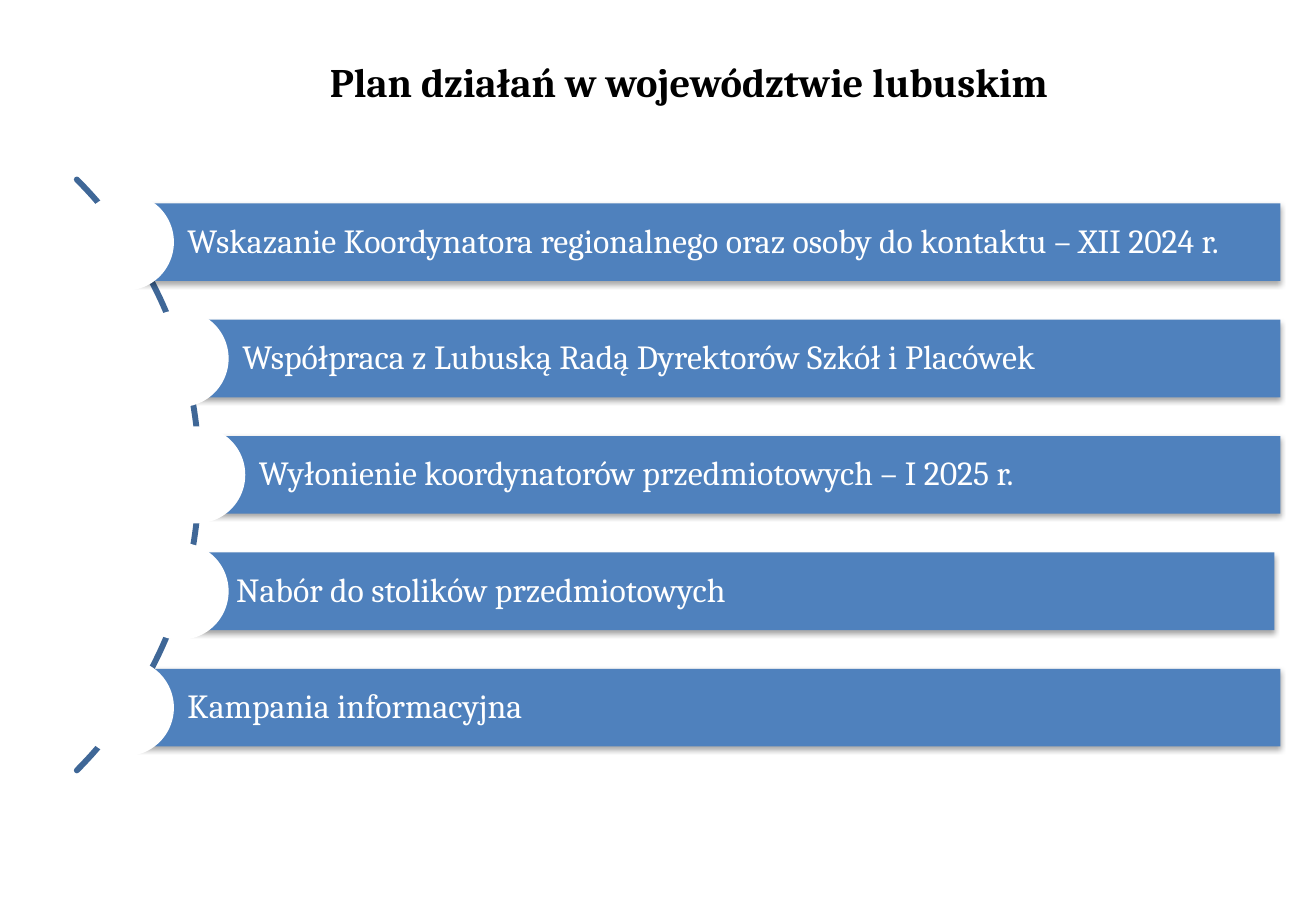
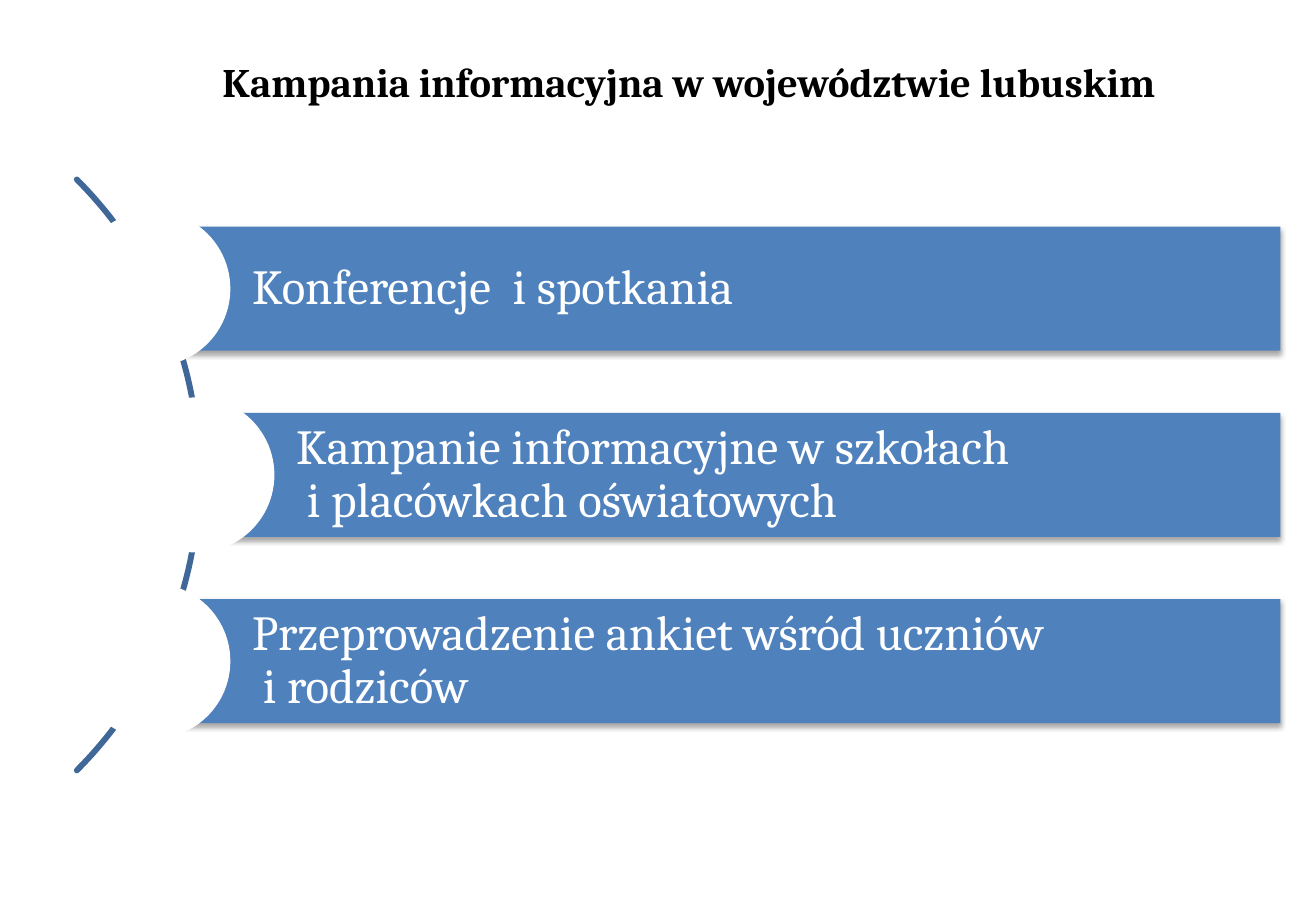
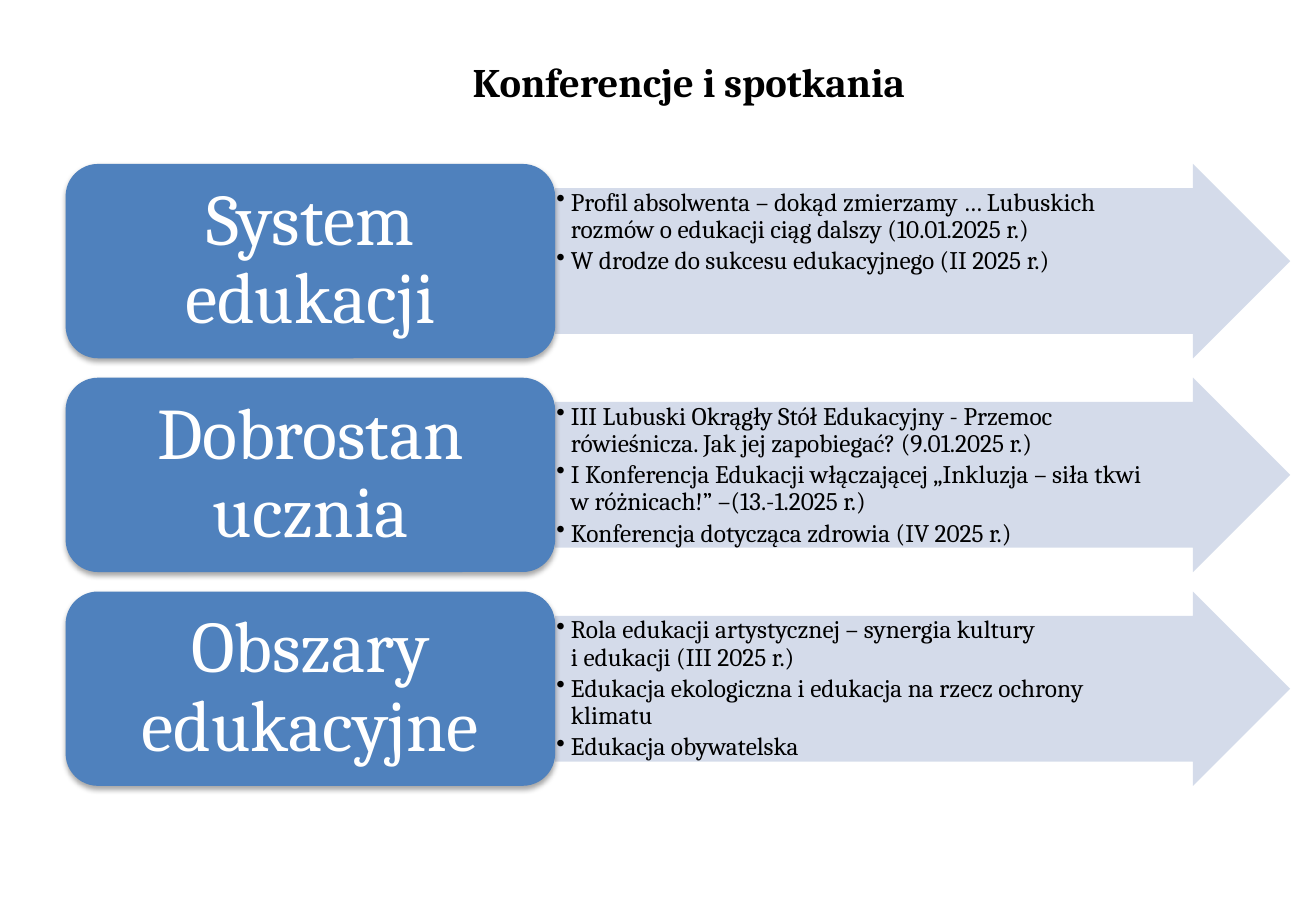
from math import cos, radians, sin, sqrt

from pptx import Presentation
from pptx.dml.color import RGBColor
from pptx.enum.shapes import MSO_SHAPE as Preset
from pptx.enum.text import MSO_ANCHOR as Anchor, PP_ALIGN as Align
from pptx.oxml import parse_xml
from pptx.oxml.ns import nsdecls, qn
from pptx.util import Inches, Pt

# All lengths below are counted in square grid cells.
CELL = Inches(0.25)
COLUMNS, ROWS = 43.33, 30

BLUE = RGBColor(0x4F, 0x81, 0xBD)
DARK_BLUE = RGBColor(0x3F, 0x67, 0x97)
PALE_BLUE = RGBColor(0xD0, 0xD8, 0xE8)
WHITE = RGBColor(0xFF, 0xFF, 0xFF)
BLACK = RGBColor(0, 0, 0)
FONT = "Cambria"

ARC_X, ARC_Y, ARC_RADIUS = -7.2, 15.64, 13.76
DOT_RADIUS = 13.68
LIST_HEIGHT, LIST_RIGHT = 20.44, 42.16
CARD_LEFT, CARD_TOP, CARD_WIDTH, CARD_HEIGHT, CARD_GAP = 2.16, 5.4, 16.12, 6.4, 0.64
ARROW_WIDTH = 24.2

PLAN = [
    "Wskazanie Koordynatora regionalnego oraz osoby do kontaktu – XII 2024 r.",
    "Współpraca z Lubuską Radą Dyrektorów Szkół i Placówek",
    "Wyłonienie koordynatorów przedmiotowych – I 2025 r.",
    "Nabór do stolików przedmiotowych",
    "Kampania informacyjna",
]
CAMPAIGN = [
    "Konferencje  i spotkania",
    "Kampanie informacyjne w szkołach\v i placówkach oświatowych",
    "Przeprowadzenie ankiet wśród uczniów\v i rodziców",
]
MEETINGS = {
    "System edukacji": [
        "Profil absolwenta – dokąd zmierzamy … Lubuskich rozmów o edukacji ciąg dalszy (10.01.2025 r.)",
        "W drodze do sukcesu edukacyjnego (II 2025 r.)",
    ],
    "Dobrostan ucznia": [
        "III Lubuski Okrągły Stół Edukacyjny - Przemoc rówieśnicza. Jak jej zapobiegać? (9.01.2025 r.)",
        "I Konferencja Edukacji włączającej „Inkluzja – siła tkwi\vw różnicach!” –(13.-1.2025 r.)",
        "Konferencja dotycząca zdrowia (IV 2025 r.)",
    ],
    "Obszary edukacyjne": [
        "Rola edukacji artystycznej – synergia kultury\vi edukacji (III 2025 r.)",
        "Edukacja ekologiczna i edukacja na rzecz ochrony klimatu",
        "Edukacja obywatelska",
    ],
}


def cells(*counts):
    return [round(count * CELL) for count in counts]


class Deck:
    def __init__(self):
        self.presentation = Presentation()
        self.presentation.slide_width, self.presentation.slide_height = cells(COLUMNS, ROWS)
        self.slide = None

    def new_slide(self, title):
        self.slide = self.presentation.slides.add_slide(self.presentation.slide_layouts[6])
        heading = self.slide.shapes.add_textbox(*cells(6.28, 0.64, 32.8, 4.08))
        self.fill_text(heading, [title], 24, BLACK, align=Align.CENTER, bold=True, spacing=1.0)

    def fill_text(self, holder, lines, size, color, align=Align.LEFT, anchor=Anchor.MIDDLE,
                  margins=(0.4, 0.2, 0.4, 0.2), bold=False, bullets=False, spacing=0.9):
        """Fill a shape with paragraphs; margins run left, top, right, bottom."""
        frame = holder.text_frame
        frame.word_wrap = True
        frame.vertical_anchor = anchor
        (frame.margin_left, frame.margin_top,
         frame.margin_right, frame.margin_bottom) = cells(*margins)
        for index, line in enumerate(lines):
            paragraph = frame.add_paragraph() if index else frame.paragraphs[0]
            paragraph.text = line
            if bullets:
                properties = paragraph._p.get_or_add_pPr()
                properties.set("marL", str(Inches(0.12)))
                properties.set("indent", str(-Inches(0.12)))
                properties.append(parse_xml(f'<a:buChar {nsdecls("a")} char="•"/>'))
                paragraph.space_after = Pt(2.25)
            paragraph.alignment = align
            paragraph.line_spacing = spacing
            font = paragraph.font
            font.name, font.size, font.bold = FONT, Pt(size), bold
            font.color.rgb = color

    def shape(self, preset, left, top, width, height, fill, shadow=False):
        shape = self.slide.shapes.add_shape(preset, *cells(left, top, width, height))
        shape.fill.solid()
        shape.fill.fore_color.rgb = fill
        shape.line.fill.background()
        shape.shadow.inherit = False
        if shadow:
            shape._element.spPr.find(qn("a:effectLst")).append(parse_xml(
                f'<a:outerShdw {nsdecls("a")} blurRad="40000" dist="23000" dir="5400000" '
                'rotWithShape="0"><a:srgbClr val="000000"><a:alpha val="35000"/>'
                '</a:srgbClr></a:outerShdw>'))
        return shape

    def arc(self):
        """Draw the quarter circle that the list items hang on."""
        points = [cells(ARC_X + ARC_RADIUS * cos(radians(angle)),
                        ARC_Y + ARC_RADIUS * sin(radians(angle)))
                  for angle in range(-45, 46)]
        builder = self.slide.shapes.build_freeform(*points[0])
        builder.add_line_segments(points[1:], close=False)
        curve = builder.convert_to_shape()
        curve.fill.background()
        curve.line.color.rgb = DARK_BLUE
        curve.line.width = Pt(3.5)
        curve._element.spPr.find(qn("a:ln")).set("cap", "rnd")
        curve.shadow.inherit = False

    def curved_list(self, items, size, shifts=None):
        """Stack bars along the arc; shifts maps an item index to a sideways move."""
        self.arc()
        bar_height = LIST_HEIGHT / (1.5 * len(items) + 0.5)
        dot = 1.25 * bar_height
        edge = 0.08 * bar_height
        for index, item in enumerate(items):
            offset = (index - (len(items) - 1) / 2) * 1.5 * bar_height
            dot_x = ARC_X + sqrt(DOT_RADIUS ** 2 - offset ** 2)
            middle = ARC_Y + offset
            bar = self.shape(Preset.RECTANGLE, dot_x + (shifts or {}).get(index, 0),
                             middle - bar_height / 2, LIST_RIGHT - dot_x, bar_height,
                             BLUE, shadow=True)
            self.fill_text(bar, [item], size, WHITE,
                           margins=(0.8 * bar_height, edge, edge, edge))
            self.shape(Preset.OVAL, dot_x - dot / 2, middle - dot / 2, dot, dot, WHITE)

    def topic_row(self, row, topic, events):
        top = CARD_TOP + row * (CARD_HEIGHT + CARD_GAP)
        arrow = self.shape(Preset.RIGHT_ARROW, CARD_LEFT + CARD_WIDTH, top,
                           ARROW_WIDTH, CARD_HEIGHT, PALE_BLUE)
        arrow.adjustments[0], arrow.adjustments[1] = 0.75, 0.5
        arrow._element.spPr.find(qn("a:solidFill"))[0].append(
            parse_xml(f'<a:alpha {nsdecls("a")} val="90000"/>'))
        self.fill_text(arrow, events, 15, BLACK, anchor=Anchor.TOP,
                       margins=(0.04, 0.04, 1.64, 0.04), bullets=True)
        card = self.shape(Preset.ROUNDED_RECTANGLE, CARD_LEFT, top,
                          CARD_WIDTH, CARD_HEIGHT, BLUE, shadow=True)
        self.fill_text(card, [topic], 43, WHITE, align=Align.CENTER,
                       margins=(0.72, 0.36, 0.72, 0.36))


def main():
    deck = Deck()
    deck.new_slide("Plan działań w województwie lubuskim")
    deck.curved_list(PLAN, 20, shifts={3: -0.2})
    deck.new_slide("Kampania informacyjna w województwie lubuskim")
    deck.curved_list(CAMPAIGN, 29)
    deck.new_slide("Konferencje i spotkania")
    for row, (topic, events) in enumerate(MEETINGS.items()):
        deck.topic_row(row, topic, events)
    deck.presentation.save("out.pptx")


if __name__ == "__main__":
    main()
